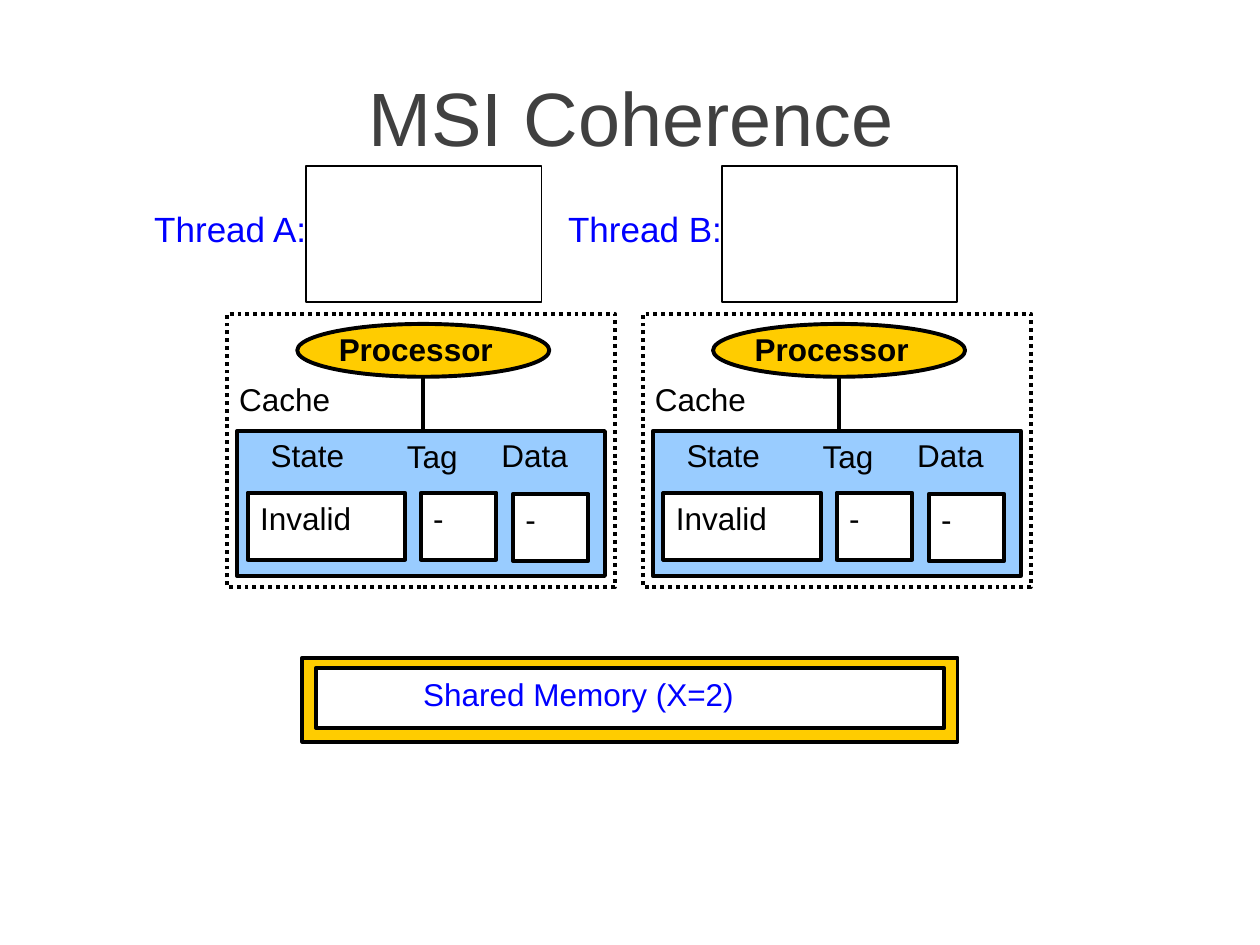
from lxml.etree import SubElement
from pptx import Presentation
from pptx.dml.color import RGBColor
from pptx.enum.dml import MSO_LINE
from pptx.enum.shapes import MSO_CONNECTOR, MSO_SHAPE
from pptx.enum.text import MSO_ANCHOR, MSO_AUTO_SIZE, PP_ALIGN
from pptx.oxml.ns import qn
from pptx.util import Pt

BLACK = RGBColor(0x00, 0x00, 0x00)
WHITE = RGBColor(0xFF, 0xFF, 0xFF)
GOLD = RGBColor(0xFF, 0xCC, 0x00)
SKY = RGBColor(0x99, 0xCC, 0xFF)
BLUE = RGBColor(0x00, 0x00, 0xFF)
GRAY = RGBColor(0x40, 0x40, 0x40)

THREADS = ("A", "B")
NODE_PITCH = 237.6


def write(shape, text, size=18, color=BLACK, bold=False,
          align=PP_ALIGN.LEFT, anchor=MSO_ANCHOR.TOP, wrap=True):
    """Fill a shape with one formatted line."""
    frame = shape.text_frame
    frame.text = text
    frame.word_wrap = wrap
    frame.vertical_anchor = anchor
    if not wrap:
        frame.auto_size = MSO_AUTO_SIZE.SHAPE_TO_FIT_TEXT
    paragraph = frame.paragraphs[0]
    paragraph.alignment = align
    font = paragraph.runs[0].font
    font.name, font.size, font.bold = "Arial", Pt(size), bold
    font.color.rgb = color


def add_label(shapes, left, top, width, height, text, **style):
    """Add a text box with one line."""
    label = shapes.add_textbox(Pt(left), Pt(top), Pt(width), Pt(height))
    write(label, text, **style)


def add_block(shapes, left, top, width, height, fill=None,
              kind=MSO_SHAPE.RECTANGLE, weight=2.25):
    """Add a black-outlined shape, unfilled by default."""
    block = shapes.add_shape(kind, Pt(left), Pt(top), Pt(width), Pt(height))
    block.shadow.inherit = False
    if fill is None:
        block.fill.background()
    else:
        block.fill.solid()
        block.fill.fore_color.rgb = fill
    block.line.color.rgb = BLACK
    block.line.width = Pt(weight)
    return block


def add_title(slide, left, top, width, height):
    """Place the slide heading."""
    add_label(slide.shapes, left, top, width, height, "MSI Coherence", size=43.2,
              color=GRAY, align=PP_ALIGN.CENTER, anchor=MSO_ANCHOR.MIDDLE)


def add_memory(slide, left, top, width, height):
    """Place the shared memory bar and its inner panel."""
    add_block(slide.shapes, left, top, width, height, GOLD)
    add_block(slide.shapes, left + 7.9, top + 5.8, width - 15.8, height - 13.7, WHITE)
    add_label(slide.shapes, left + 61.9, top + 6.5, 251.3, 36,
              "Shared Memory (X=2)", color=BLUE, wrap=False)


def add_thread(slide, left, top, name):
    """Place a thread's name and its empty code box."""
    add_block(slide.shapes, left + 95, top, 134.6, 77.8, weight=1)
    add_label(slide.shapes, left, top + 20.2, 102.2, 31, f"Thread {name}:",
              size=20, color=BLUE, align=PP_ALIGN.RIGHT, wrap=False)


def add_cache(slide, left, top, width, height):
    """Place a grouped cache line with its state, tag and data fields."""
    shapes = slide.shapes.add_group_shape().shapes
    add_block(shapes, left, top, width, height, SKY)
    fields = (
        ("Tag", "-", 105.1, 35.3, 43.2, 90, 0, 69.8),
        ("State", "Invalid", 6.1, 35.3, 90, 12.2, -0.7, 73.4),
        ("Data", "-", 157.7, 36, 43.2, 144, -0.7, 69.8),
    )
    for name, value, cell_x, cell_y, cell_width, name_x, name_y, name_width in fields:
        cell = add_block(shapes, left + cell_x, top + cell_y, cell_width, 38.2, WHITE)
        write(cell, value)
        add_label(shapes, left + name_x, top + name_y, name_width, 36, name)


def add_node(slide, left, top, width, height):
    """Place a processor linked to its cache inside a dotted frame."""
    shapes = slide.shapes
    add_block(shapes, left + 40.3, top + 5.8, 144, 30.2, GOLD, MSO_SHAPE.OVAL)
    add_label(shapes, left, top + 34.6, 84.2, 36, "Cache", wrap=False)
    add_label(shapes, left + 56.9, top + 5.8, 110, 28.8, "Processor",
              bold=True, anchor=MSO_ANCHOR.MIDDLE)
    frame = add_block(shapes, left, top, width, height)
    frame.line.dash_style = MSO_LINE.ROUND_DOT
    add_cache(slide, left + 5.8, top + 67, width - 11.5, 82.8)
    bus_x = Pt(left + 112.3)
    bus = shapes.add_connector(MSO_CONNECTOR.STRAIGHT, bus_x, Pt(top + 36.7),
                               bus_x, Pt(top + 67))
    bus.line.color.rgb = BLACK
    bus.line.width = Pt(2.25)
    SubElement(bus._element.spPr, qn("a:effectLst"))


def main():
    """Build and save the slide."""
    deck = Presentation()
    deck.slide_width, deck.slide_height = Pt(720), Pt(540)
    slide = deck.slides.add_slide(deck.slide_layouts[6])
    add_title(slide, 21.6, 48.2, 678.2, 36)
    add_memory(slide, 172.8, 375.8, 374.4, 48.2)
    for index, name in enumerate(THREADS):
        shift = index * NODE_PITCH
        add_thread(slide, 79.9 + shift, 95, name)
        add_node(slide, 129.6 + shift, 179.3, 221.8, 156.2)
    deck.save("out.pptx")


if __name__ == "__main__":
    main()
